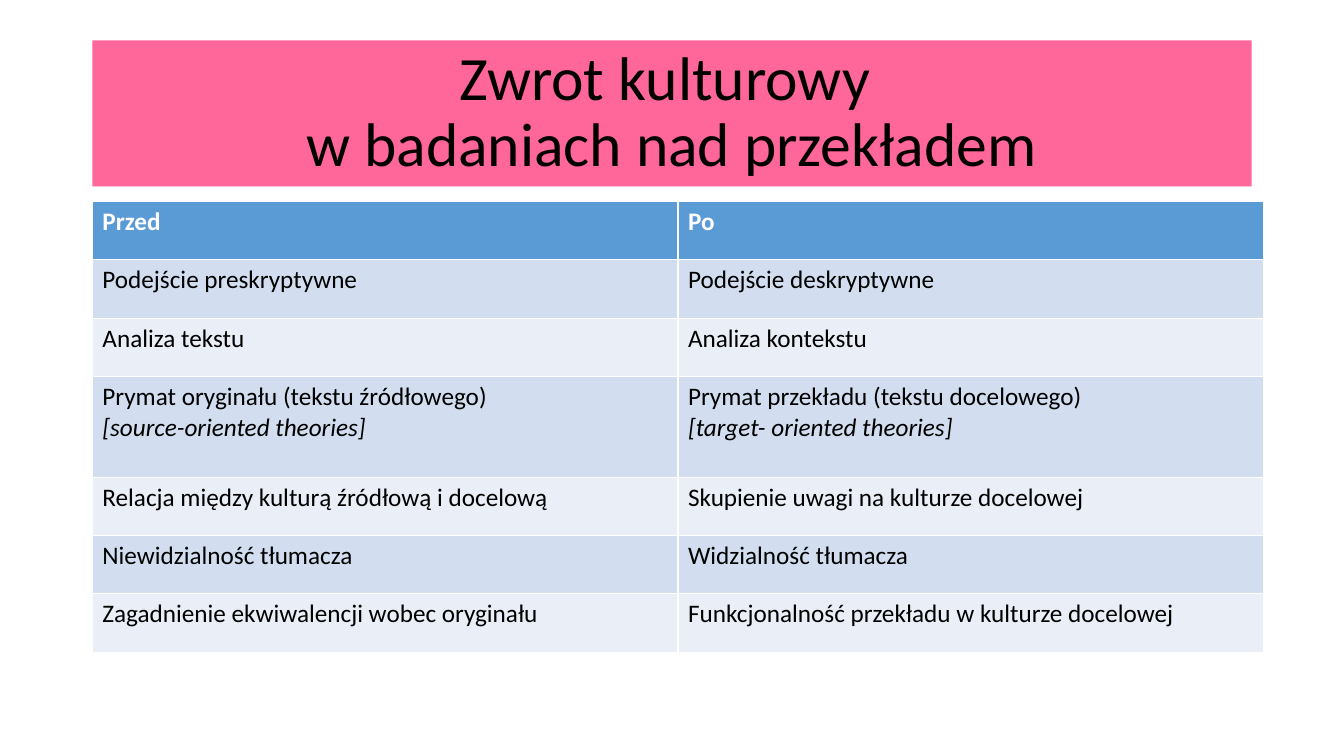
from dataclasses import dataclass

from pptx import Presentation
from pptx.dml.color import RGBColor
from pptx.enum.text import MSO_ANCHOR, MSO_AUTO_SIZE, PP_ALIGN
from pptx.util import Pt

# \v breaks a line, \n starts a new paragraph
TITLE = "Zwrot kulturowy \vw badaniach nad przekładem"
ROWS = [
    ("Przed", "Po"),
    ("Podejście preskryptywne", "Podejście deskryptywne"),
    ("Analiza tekstu", "Analiza kontekstu"),
    ("Prymat oryginału (tekstu źródłowego)\n[source-oriented theories]",
     "Prymat przekładu (tekstu docelowego)\n[target- oriented theories]"),
    ("Relacja między kulturą źródłową i docelową",
     "Skupienie uwagi na kulturze docelowej"),
    ("Niewidzialność tłumacza", "Widzialność tłumacza"),
    ("Zagadnienie ekwiwalencji wobec oryginału",
     "Funkcjonalność przekładu w kulturze docelowej"),
]


@dataclass(frozen=True)
class Theme:
    font: str = "Calibri"
    title: int = 44
    body: int = 18
    pink: str = "FF6699"
    head: str = "5B9BD5"
    bands: tuple = ("EAEFF7", "D2DEEF")
    dark: str = "000000"
    light: str = "FFFFFF"


THEME = Theme()
LEFT = 66
TITLE_TOP, TITLE_W, TITLE_H = 28.8, 828, 104.4
TABLE_TOP, COL_W = 144, 418.3
ROW_H, TALL_H = 41.65, 72


def paint(shape, color):
    shape.fill.solid()
    shape.fill.fore_color.rgb = RGBColor.from_string(color)


def style(run, size, color, bold=False, italic=False):
    font = run.font
    font.name, font.size = THEME.font, Pt(size)
    font.bold, font.italic = bold, italic
    font.color.rgb = RGBColor.from_string(color)


def add_title(slide):
    title = slide.shapes.title
    title.left, title.top = Pt(LEFT), Pt(TITLE_TOP)
    title.width, title.height = Pt(TITLE_W), Pt(TITLE_H)
    paint(title, THEME.pink)
    frame = title.text_frame
    frame.text = TITLE
    frame.auto_size = MSO_AUTO_SIZE.NONE
    frame.vertical_anchor = MSO_ANCHOR.MIDDLE
    para = frame.paragraphs[0]
    para.alignment, para.line_spacing = PP_ALIGN.CENTER, 0.9
    for run in para.runs:
        style(run, THEME.title, THEME.dark)


def fill_cell(cell, text, row):
    head = row == 0
    paint(cell, THEME.head if head else THEME.bands[row % 2])
    cell.text_frame.text = text
    for para in cell.text_frame.paragraphs:
        for run in para.runs:
            style(run, THEME.body, THEME.light if head else THEME.dark,
                  bold=head, italic=run.text.startswith("["))


def add_grid(slide):
    heights = [TALL_H if "\n" in row[0] else ROW_H for row in ROWS]
    cols = len(ROWS[0])
    grid = slide.shapes.add_table(
        len(ROWS), cols, Pt(LEFT), Pt(TABLE_TOP),
        Pt(cols * COL_W), Pt(sum(heights))).table
    for col in grid.columns:
        col.width = Pt(COL_W)
    for r, (texts, height) in enumerate(zip(ROWS, heights)):
        grid.rows[r].height = Pt(height)
        for c, text in enumerate(texts):
            fill_cell(grid.cell(r, c), text, r)


def main():
    deck = Presentation()
    deck.slide_width, deck.slide_height = Pt(960), Pt(540)
    slide = deck.slides.add_slide(deck.slide_layouts.get_by_name("Title Only"))
    add_title(slide)
    add_grid(slide)
    deck.save("out.pptx")


if __name__ == "__main__":
    main()
